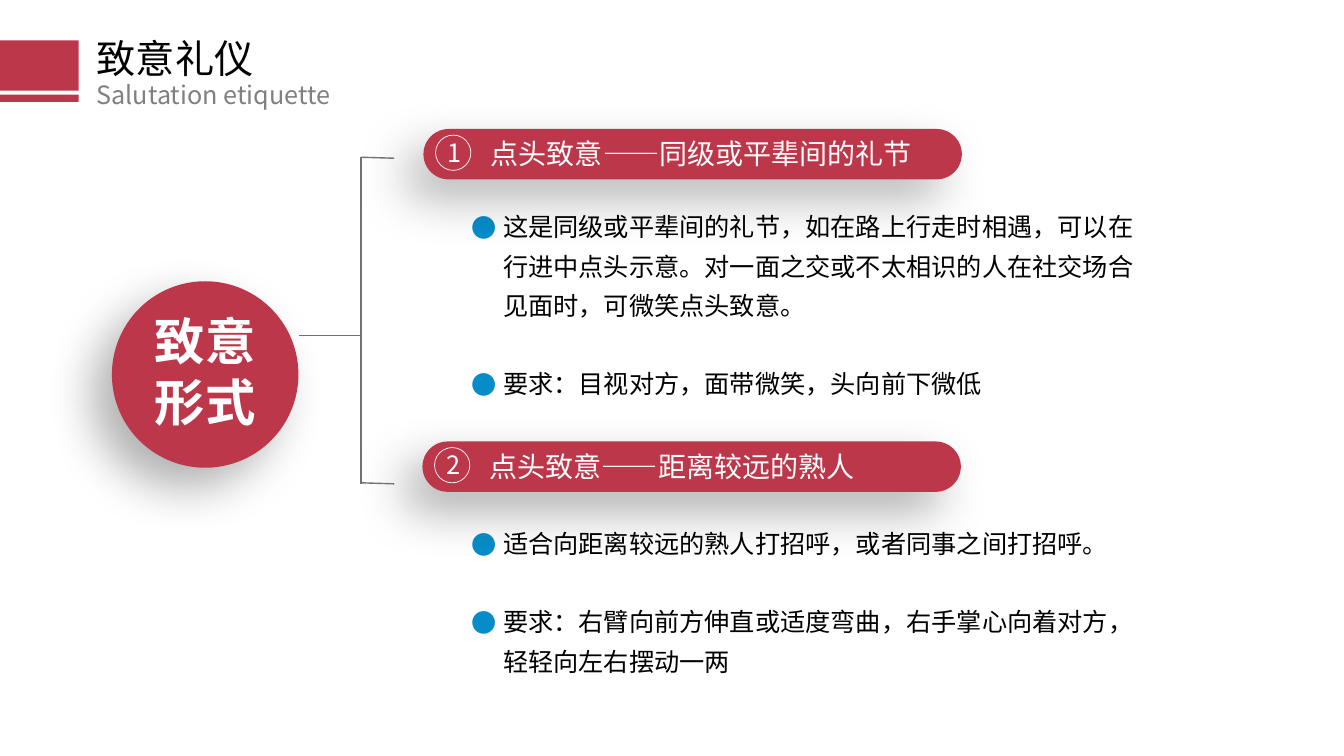
from lxml.etree import SubElement
from pptx import Presentation
from pptx.dml.color import RGBColor
from pptx.enum.shapes import MSO_CONNECTOR as Connector, MSO_SHAPE as Preset
from pptx.enum.text import MSO_ANCHOR as Anchor, MSO_AUTO_SIZE as AutoSize, PP_ALIGN as Align
from pptx.oxml.ns import qn
from pptx.util import Inches, Pt

FONT = "Noto Sans CJK SC"
RED = RGBColor(0xBD, 0x37, 0x4B)
WHITE = RGBColor(0xFF, 0xFF, 0xFF)
BLACK = RGBColor(0, 0, 0)
GRAY = RGBColor(0x80, 0x80, 0x80)
LINE_GRAY = RGBColor(0x76, 0x71, 0x71)
BULLET_BLUE = RGBColor(0x06, 0x8D, 0xC9)

TITLE, SUBTITLE = "致意礼仪", "Salutation etiquette"
TOPIC = ["致意", "形式"]
SECTIONS = [
    {"heading": "点头致意——同级或平辈间的礼节", "pill": (4.2, 1.28), "opacity": 28,
     "body": (4.58, 1.96, 6.99, 2.07),
     "points": ["这是同级或平辈间的礼节，如在路上行走时相遇，可以在行进中点头示意。"
                "对一面之交或不太相识的人在社交场合见面时，可微笑点头致意。",
                "要求：目视对方，面带微笑，头向前下微低"]},
    {"heading": "点头致意——距离较远的熟人", "pill": (4.19, 4.38), "opacity": 31,
     "body": (4.58, 5.1, 6.99, 1.68),
     "points": ["适合向距离较远的熟人打招呼，或者同事之间打招呼。",
                "要求：右臂向前方伸直或适度弯曲，右手掌心向着对方，轻轻向左右摆动一两"]},
]
HEADER_BARS = [(0, 0.4, 0.78, 0.5), (0, 0.94, 0.78, 0.07)]
SPINE_X, ARM_X = 3.58, 3.91
SPINE_TOP, SPINE_BOTTOM = 1.56, 4.8
BRACKET = [
    (SPINE_X, 3.33, 2.97, 3.33),
    (SPINE_X, SPINE_TOP, SPINE_X, SPINE_BOTTOM),
    (ARM_X, SPINE_TOP + 0.01, SPINE_X, SPINE_TOP),
    (ARM_X, SPINE_BOTTOM, SPINE_X, SPINE_BOTTOM - 0.01),
]

deck = Presentation()
deck.slide_width, deck.slide_height = Inches(13.33), Inches(7.5)
page = deck.slides.add_slide(deck.slide_layouts.get_by_name("Two Content"))


def add_bullet(para):
    props = para._p.get_or_add_pPr()
    props.set("marL", str(Inches(0.31)))
    props.set("indent", str(-Inches(0.31)))
    color = SubElement(props, qn("a:buClr"))
    SubElement(color, qn("a:srgbClr"), val=str(BULLET_BLUE))
    SubElement(props, qn("a:buFont"), typeface=FONT)
    SubElement(props, qn("a:buChar"), char="●")


def write(lines, place, holder=None, size=18, color=BLACK, bold=False, align=Align.LEFT,
          wrap=True, inset=None, spacing=1.0, gap=0, bullets=False):
    """Put lines in a placeholder, or in a new text box when no holder is given."""
    left, top, width, height = map(Inches, place)
    if holder is None:
        holder = page.shapes.add_textbox(left, top, width, height)
    else:
        holder.left, holder.top, holder.width, holder.height = left, top, width, height
    frame = holder.text_frame
    frame.word_wrap, frame.auto_size = wrap, AutoSize.NONE
    frame.vertical_anchor = Anchor.TOP
    if inset is not None:
        frame.margin_left = frame.margin_right = Inches(inset)
        frame.margin_top = frame.margin_bottom = Inches(inset)
    for index, line in enumerate(lines):
        para = frame.add_paragraph() if index else frame.paragraphs[0]
        para.alignment, para.line_spacing = align, spacing
        para.space_before = Pt(gap if index else 0)
        if bullets:
            add_bullet(para)
        span = para.add_run()
        span.text = line
        span.font.size, span.font.bold = Pt(size), bold
        span.font.color.rgb = color
        span.font.name = FONT
        SubElement(span.font._element, qn("a:ea"), typeface=FONT)


def draw(preset, place, fill=None, line=None, opacity=None):
    shape = page.shapes.add_shape(preset, *map(Inches, place))
    shape.shadow.inherit = False
    if fill is None:
        shape.fill.background()
    else:
        shape.fill.solid()
        shape.fill.fore_color.rgb = fill
    if line is None:
        shape.line.fill.background()
    else:
        shape.line.color.rgb, shape.line.width = line, Pt(0.5)
    if opacity is not None:
        effects = shape._element.spPr.find(qn("a:effectLst"))
        shadow = SubElement(effects, qn("a:outerShdw"), blurRad=str(Pt(35)), dist=str(Pt(20)),
                            dir=str(135 * 60000), algn="tr", rotWithShape="0")
        tint = SubElement(shadow, qn("a:srgbClr"), val=str(BLACK))
        SubElement(tint, qn("a:alpha"), val=str(opacity * 1000))
    return shape


for bar in HEADER_BARS:
    draw(Preset.RECTANGLE, bar, fill=RED)
title, *bodies = page.placeholders
write([TITLE], (0.86, 0.29, 1.77, 0.57), holder=title, size=28, wrap=False)
write([SUBTITLE], (0.86, 0.74, 2.6, 0.4), color=GRAY, wrap=False)

draw(Preset.OVAL, (1.11, 2.79, 1.85, 1.85), fill=RED, opacity=31)
write(TOPIC, (1.1, 3.08, 1.87, 1.21), size=36, color=WHITE, bold=True,
      align=Align.CENTER, inset=0)

for number, (section, body) in enumerate(zip(SECTIONS, bodies), start=1):
    left, top = section["pill"]
    pill = draw(Preset.ROUNDED_RECTANGLE, (left, top, 5.34, 0.5), fill=RED,
                opacity=section["opacity"])
    pill.adjustments[0] = 0.5
    write([section["heading"]], (left + 0.57, top + 0.03, 4.47, 0.44), size=20, color=WHITE)
    write([str(number)], (left + 0.14, top + 0.03, 0.35, 0.4), color=WHITE)
    draw(Preset.OVAL, (left + 0.12, top + 0.06, 0.35, 0.35), line=WHITE)
    write(section["points"], section["body"], holder=body, spacing=1.3, gap=28, bullets=True)

for ends in BRACKET:
    link = page.shapes.add_connector(Connector.STRAIGHT, *map(Inches, ends))
    link.line.color.rgb, link.line.width = LINE_GRAY, Pt(1)
    SubElement(link._element.spPr, qn("a:effectLst"))

deck.save("out.pptx")
